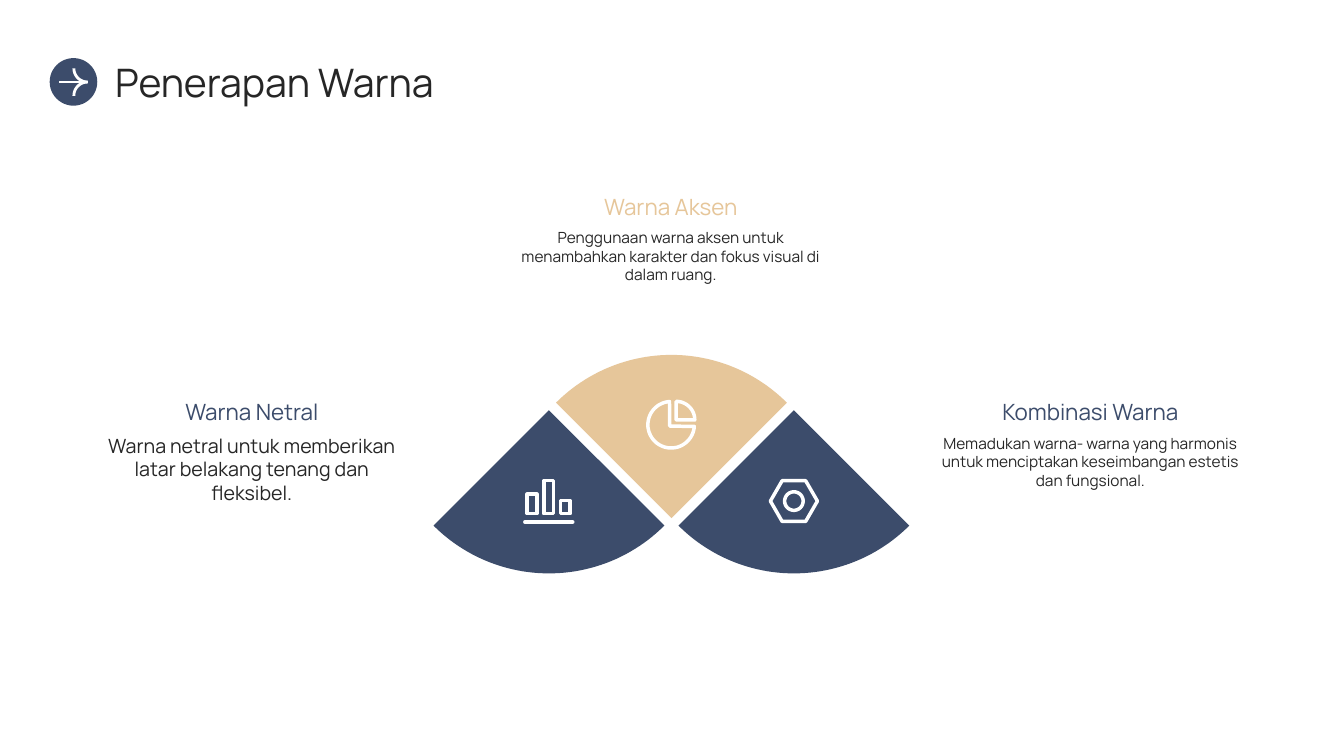
import math

import pptx
import pptx.dml.color
import pptx.enum.shapes
import pptx.enum.text
import pptx.util

Pt = pptx.util.Pt
RGB = pptx.dml.color.RGBColor.from_string
ALIGN = pptx.enum.text.PP_ALIGN
ANCHOR = pptx.enum.text.MSO_ANCHOR


class Theme:
    font = "Manrope"
    ink, navy, sand, white = (RGB(c) for c in ("262626", "3C4C6B", "E6C69A", "FFFFFF"))
    title, heading, large_body, body = 28, 16, 14, 11
    icon_line, arrow_line = 2.5, 2


def write(box, text, size=Theme.body, color=Theme.ink, align=ALIGN.CENTER, anchor=ANCHOR.TOP):
    frame = box.text_frame
    frame.word_wrap = True
    frame.auto_size = pptx.enum.text.MSO_AUTO_SIZE.NONE
    frame.vertical_anchor = anchor
    frame.margin_left = frame.margin_right = frame.margin_top = frame.margin_bottom = 0
    paragraph = frame.paragraphs[0]
    paragraph.text = text
    paragraph.alignment = align
    paragraph.line_spacing = 1.0
    font = paragraph.runs[0].font
    font.name, font.size, font.color.rgb = Theme.font, Pt(size), color


def arc(x, y, radius, start, end, steps=48):
    """Points on an arc by angles in degrees, clockwise from the right."""
    angles = [math.radians(start + (end - start) * step / steps) for step in range(steps + 1)]
    return [(x + radius * math.cos(angle), y + radius * math.sin(angle)) for angle in angles]


deck = pptx.Presentation()
deck.slide_width, deck.slide_height = Pt(960), Pt(540)
slide = deck.slides.add_slide(deck.slide_layouts[5])

# Title and its round badge
title = slide.shapes.title
title.left, title.top, title.width, title.height = Pt(82.2), Pt(41.8), Pt(824.4), Pt(33.8)
write(title, "Penerapan Warna", size=Theme.title, align=ALIGN.LEFT, anchor=ANCHOR.MIDDLE)
badge = slide.shapes.add_shape(pptx.enum.shapes.MSO_SHAPE.OVAL, Pt(35.5), Pt(41.5), Pt(34), Pt(34))
badge.shadow.inherit = False
badge.fill.solid()
badge.fill.fore_color.rgb = Theme.navy
badge.line.fill.background()

# Heading and body for each sector
topics = [
    (67.2, 251.3, "Warna Netral", Theme.navy, Theme.large_body,
     "Warna netral untuk memberikan latar belakang tenang dan fleksibel."),
    (366.5, 104.4, "Warna Aksen", Theme.sand, Theme.body,
     "Penggunaan warna aksen untuk menambahkan karakter dan fokus visual di dalam ruang."),
    (666.2, 251.3, "Kombinasi Warna", Theme.navy, Theme.body,
     "Memadukan warna- warna yang harmonis untuk menciptakan keseimbangan estetis dan fungsional."),
]
for left, top, heading, color, body_size, body in topics:
    heading_box = slide.shapes.add_textbox(Pt(left), Pt(top), Pt(225.4), Pt(52.6))
    write(heading_box, heading, size=Theme.heading, color=color, anchor=ANCHOR.BOTTOM)
    body_box = slide.shapes.add_textbox(Pt(left), Pt(top + 58.6), Pt(225.4), Pt(81.4))
    write(body_box, body, size=body_size)

# Three fan sectors, each a quarter circle with its apex
center_x, sector_gap, radius = 479.6, 87.5, 116.6
neutral_x, combination_x = center_x - sector_gap, center_x + sector_gap
accent_sector = [(center_x, 370.1)] + arc(center_x, 370.1, radius, 225, 315)
neutral_sector, combination_sector = (
    [(x, 293)] + arc(x, 293, radius, 45, 135) for x in (neutral_x, combination_x))

# Icons: bars on a base line, pie with a loose slice, nut, arrow
bars = [[(374.9, 372.9), (409.1, 372.9)]]
bar_bottom, bar_width = 366.9, 7
for index, bar_top in enumerate((353, 343.3, 357.6)):
    left = 376.5 + 11.9 * index
    right = left + bar_width
    bars.append([(left, bar_top), (right, bar_top), (right, bar_bottom), (left, bar_bottom)])
pie = [[(478.4, 304.4)] + arc(479.4, 303.4, 16.6, 4, 266),
       [(483, 300)] + arc(483, 300, 13.3, 270, 360)]
nut = [arc(combination_x, 357.9, 16.8, 0, 300, steps=5),
       arc(combination_x, 357.9, 6.6, 0, 352.5, steps=47)]
arrow_tip_x, arrow_y, curve = 62.6, 58.6, 9.8
arrow = [[(42.5, arrow_y), (arrow_tip_x, arrow_y)],
         arc(arrow_tip_x, arrow_y - curve, curve, 180, 90),
         arc(arrow_tip_x, arrow_y + curve, curve, 180, 270)]

# Draw sectors filled and icons as white strokes
drawings = [
    ([accent_sector], Theme.sand, None, True),
    ([combination_sector], Theme.navy, None, True),
    ([neutral_sector], Theme.navy, None, True),
    (pie, None, Theme.icon_line, True),
    (bars, None, Theme.icon_line, True),
    (nut, None, Theme.icon_line, True),
    (arrow, None, Theme.arrow_line, False),
]
for contours, fill, line_width, closed in drawings:
    outlines = [[(Pt(x), Pt(y)) for x, y in contour] for contour in contours]
    builder = slide.shapes.build_freeform(*outlines[0][0], scale=1.0)
    for outline in outlines:
        if outline is not outlines[0]:
            builder.move_to(*outline[0])
        builder.add_line_segments(outline[1:], close=closed)
    figure = builder.convert_to_shape()
    figure.shadow.inherit = False
    if fill is None:
        figure.fill.background()
        figure.line.color.rgb, figure.line.width = Theme.white, Pt(line_width)
    else:
        figure.fill.solid()
        figure.fill.fore_color.rgb = fill
        figure.line.fill.background()

deck.save("out.pptx")
